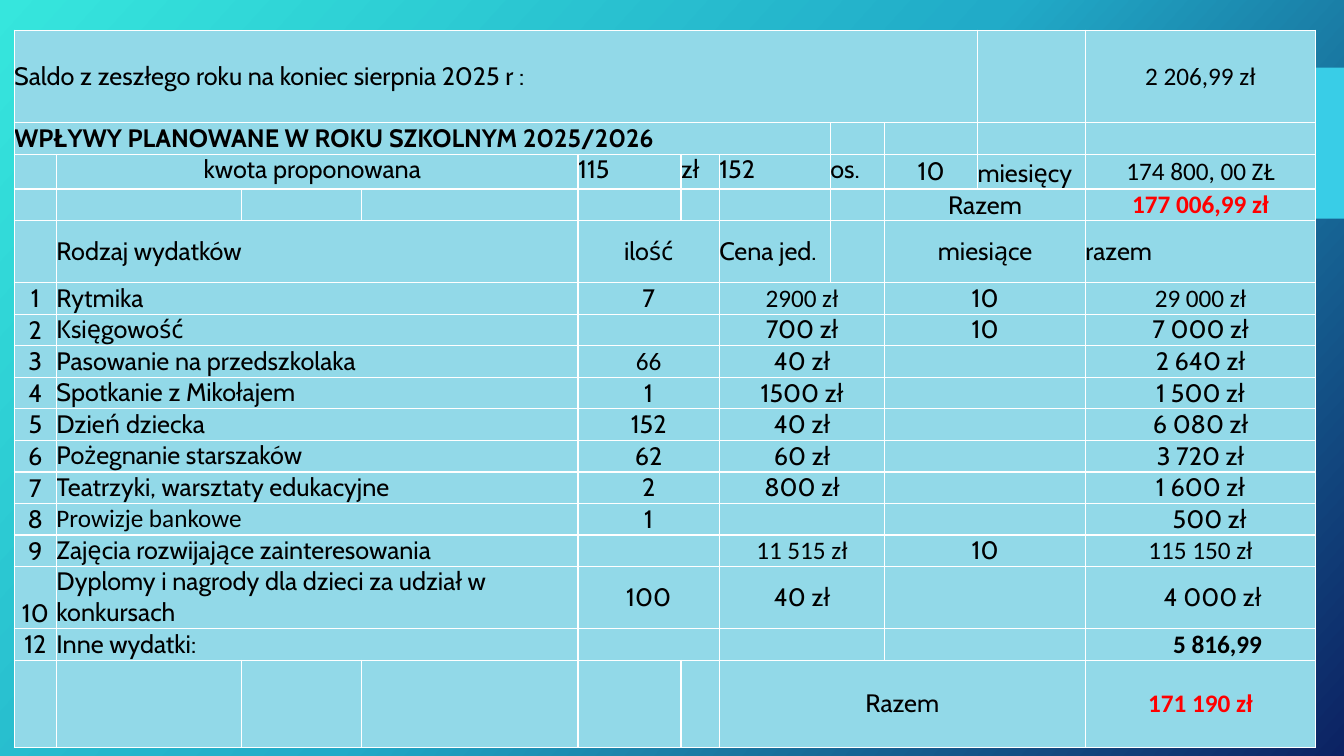
import copy
from dataclasses import dataclass

import pptx
import pptx.dml.color
import pptx.enum.shapes
import pptx.enum.text
import pptx.oxml
import pptx.oxml.ns
import pptx.util

Inches = pptx.util.Inches
PP = pptx.enum.text.PP_ALIGN
MSO = pptx.enum.text.MSO_ANCHOR


@dataclass(frozen=True)
class Theme:
    gradient: tuple = ((0, "36E6DD"), (0.5, "21ABC8"), (1, "0C2263"))
    gradient_angle: float = 318
    accent: str = "39CDE7"
    cell: str = "92D9E8"
    border: str = "FFFFFF"
    text: str = "000000"
    total: str = "FF0000"
    body: str = "Cabin"
    figures: str = "Calibri"
    size: int = 18
    border_width: float = 1


THEME = Theme()
COLS = [0.42, 1.83, 1.19, 2.15, 1.02, 0.38, 1.1, 0.54, 0.92, 1.07, 2.28]
ROWS = [0.91, 0.31, 0.34, 0.31, 0.61] + [0.31] * 9 + [0.61, 0.31, 0.86]

# Recurring cell formats
FIG = dict(font=THEME.figures)
TOTAL = dict(font=THEME.figures, color=THEME.total, bold=True)
LEFT = dict(align=PP.LEFT)
TOP_LEFT = dict(align=PP.LEFT, anchor=MSO.TOP)
BOTTOM = dict(anchor=MSO.BOTTOM)

# Cells above and below the expense list: row, column, columns spanned, text, format
FRAME_CELLS = [
    (0, 0, 9, "Saldo z zeszłego roku na koniec sierpnia 2025 r :", LEFT),
    (0, 10, 1, "2 206,99 zł", FIG),
    (1, 0, 7, "WPŁYWY PLANOWANE W ROKU SZKOLNYM 2025/2026", dict(TOP_LEFT, bold=True)),
    (2, 1, 3, "kwota proponowana", dict(anchor=MSO.TOP, right=0.1)),
    (2, 4, 1, "115", TOP_LEFT),
    (2, 5, 1, "zł", TOP_LEFT),
    (2, 6, 1, "152", TOP_LEFT),
    (2, 7, 1, "os.", TOP_LEFT),
    (2, 8, 1, "10", {}),
    (2, 9, 1, "miesięcy", dict(LEFT, **BOTTOM)),
    (2, 10, 1, "174 800, 00 ZŁ", FIG),
    (3, 8, 2, "Razem", BOTTOM),
    (3, 10, 1, "177 006,99 zł", TOTAL),
    (4, 1, 3, "Rodzaj wydatków", LEFT),
    (4, 4, 2, "ilość", {}),
    (4, 6, 1, "Cena jed.", LEFT),
    (4, 8, 2, "miesiące", {}),
    (4, 10, 1, "razem", LEFT),
    (16, 6, 4, "Razem", {}),
    (16, 10, 1, "171 190 zł", TOTAL),
]

# Expense list: number, kind, quantity, unit price, months, total
EXPENSE_TOP = 5
EXPENSE_SPANS = [(0, 1), (1, 3), (4, 2), (6, 2), (8, 2), (10, 1)]
EXPENSE_FORMATS = [BOTTOM, TOP_LEFT, {}, {}, {}, {}]
EXPENSES = [
    ("1", "Rytmika", "7", "2900 zł", "10", "29 000 zł"),
    ("2", "Księgowość", "", "700 zł", "10", "7 000 zł"),
    ("3", "Pasowanie na przedszkolaka", "66", "40 zł", "", "2 640 zł"),
    ("4", "Spotkanie z Mikołajem", "1", "1500 zł", "", "1 500 zł"),
    ("5", "Dzień dziecka", "152", "40 zł", "", "6 080 zł"),
    ("6", "Pożegnanie starszaków", "62", "60 zł", "", "3 720 zł"),
    ("7", "Teatrzyki, warsztaty edukacyjne", "2", "800 zł", "", "1 600 zł"),
    ("8", "Prowizje bankowe", "1", "", "", "500 zł"),
    ("9", "Zajęcia rozwijające zainteresowania", "", "11 515 zł", "10", "115 150 zł"),
    ("10", "Dyplomy i nagrody dla dzieci za udział w konkursach", "100", "40 zł", "",
     "4 000 zł"),
    ("12", "Inne wydatki:", "", "", "", "5 816,99"),
]
# Exceptions to the column formats, by expense number and field
EXPENSE_EXTRAS = {
    ("1", 3): FIG, ("1", 5): FIG, ("3", 2): FIG, ("8", 1): FIG,
    ("9", 3): FIG, ("9", 5): FIG,
    ("8", 5): dict(left=0.18),
    ("10", 5): dict(left=0.24),
    ("12", 5): dict(FIG, bold=True, left=0.34),
}


def rgb(value):
    return pptx.dml.color.RGBColor.from_string(value)


def write(cell, text, font=THEME.body, color=THEME.text, bold=False,
          align=PP.CENTER, anchor=MSO.MIDDLE, left=0, right=0):
    cell.vertical_anchor = anchor
    cell.margin_left, cell.margin_right = Inches(left), Inches(right)
    p = cell.text_frame.paragraphs[0]
    p.alignment = align
    r = p.add_run()
    r.text = text
    r.font.name, r.font.bold = font, bold
    r.font.size = pptx.util.Pt(THEME.size)
    r.font.color.rgb = rgb(color)


def style_cell(cell):
    cell.margin_left = cell.margin_right = cell.margin_top = cell.margin_bottom = 0
    tc_pr = cell._tc.get_or_add_tcPr()
    width = pptx.util.Pt(THEME.border_width)
    for side in "LRTB":
        tc_pr.append(pptx.oxml.parse_xml(
            f'<a:ln{side} {pptx.oxml.ns.nsdecls("a")} w="{width}"><a:solidFill>'
            f'<a:srgbClr val="{THEME.border}"/></a:solidFill></a:ln{side}>'))
    cell.fill.solid()
    cell.fill.fore_color.rgb = rgb(THEME.cell)


def add_backdrop(s, x, y, w, h):
    # Diagonal gradient
    fill = s.background.fill
    fill.gradient()
    stop_list = s.element.xpath(".//p:bg//a:gsLst")[0]
    stop_list.append(copy.deepcopy(stop_list[0]))
    for stop, (position, color) in zip(fill.gradient_stops, THEME.gradient):
        stop.position = position
        stop.color.rgb = rgb(color)
    fill.gradient_angle = THEME.gradient_angle

    # Accent block at the right edge
    sp = s.shapes.add_shape(pptx.enum.shapes.MSO_SHAPE.RECTANGLE,
                            Inches(x), Inches(y), Inches(w), Inches(h))
    sp.shadow.inherit = False
    sp.fill.solid()
    sp.fill.fore_color.rgb = rgb(THEME.accent)
    sp.line.fill.background()


def add_budget_table(s, x, y, w, h):
    table = s.shapes.add_table(len(ROWS), len(COLS), Inches(x), Inches(y),
                               Inches(w), Inches(h)).table
    table.first_row = table.horz_banding = False
    for column, width in zip(table.columns, COLS):
        column.width = Inches(width * w / sum(COLS))
    for row, height in zip(table.rows, ROWS):
        row.height = Inches(height * h / sum(ROWS))
    for cell in table.iter_cells():
        style_cell(cell)

    # Gather the expense rows with the frame cells
    entries = list(FRAME_CELLS)
    for row, expense in enumerate(EXPENSES, EXPENSE_TOP):
        for field, (col, span) in enumerate(EXPENSE_SPANS):
            extra = EXPENSE_EXTRAS.get((expense[0], field), {})
            entries.append((row, col, span, expense[field],
                            {**EXPENSE_FORMATS[field], **extra}))

    # Merge and fill
    for row, col, span, text, fmt in entries:
        cell = table.cell(row, col)
        if span > 1:
            cell.merge(table.cell(row, col + span - 1))
        if text:
            write(cell, text, **fmt)


def main():
    prs = pptx.Presentation()
    prs.slide_width, prs.slide_height = Inches(13.33), Inches(7.5)
    s = prs.slides.add_slide(prs.slide_layouts[6])
    add_backdrop(s, 11.58, 0.67, 1.75, 1.5)
    add_budget_table(s, 0.14, 0.3, 12.91, 7.12)
    prs.save("out.pptx")


if __name__ == "__main__":
    main()
